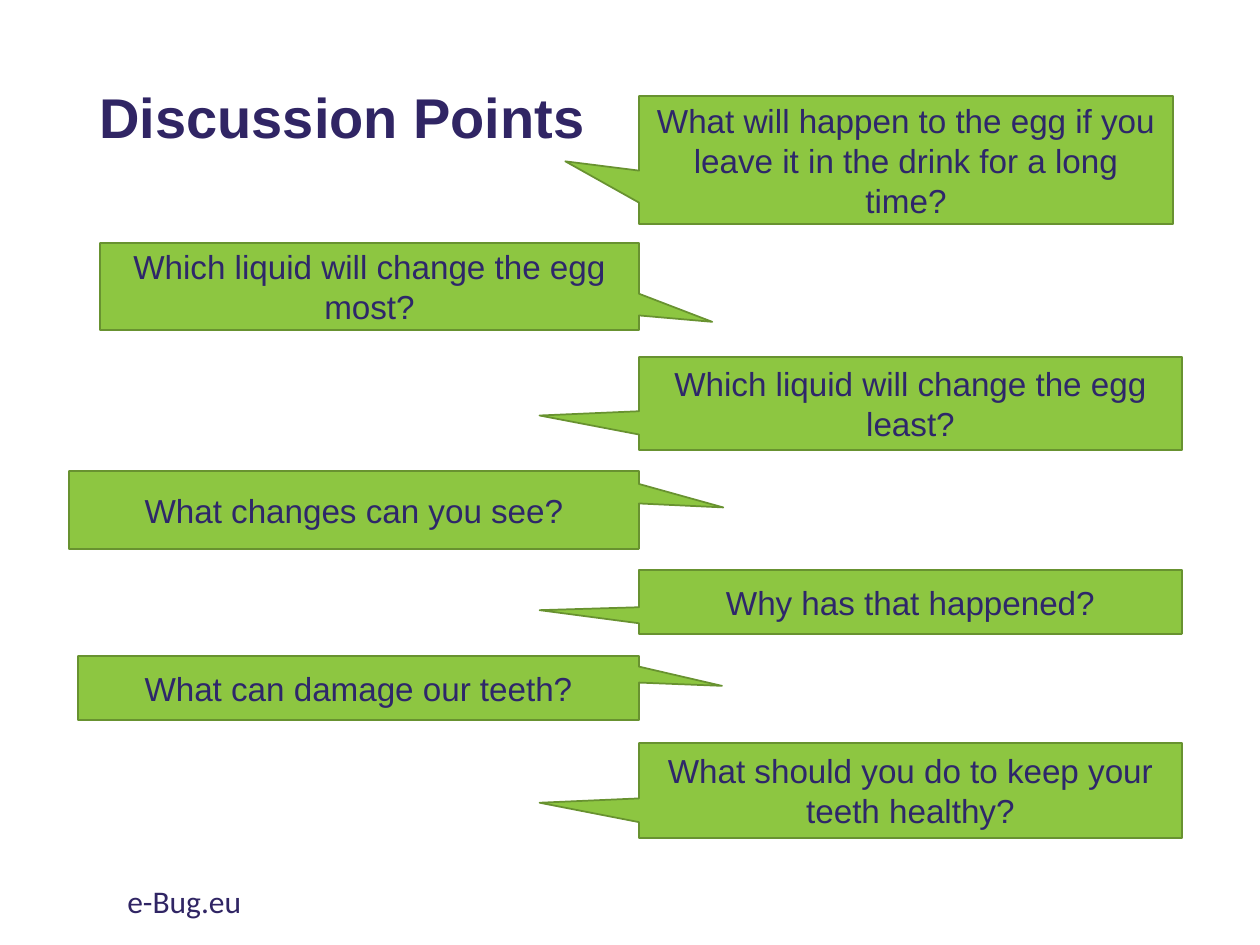
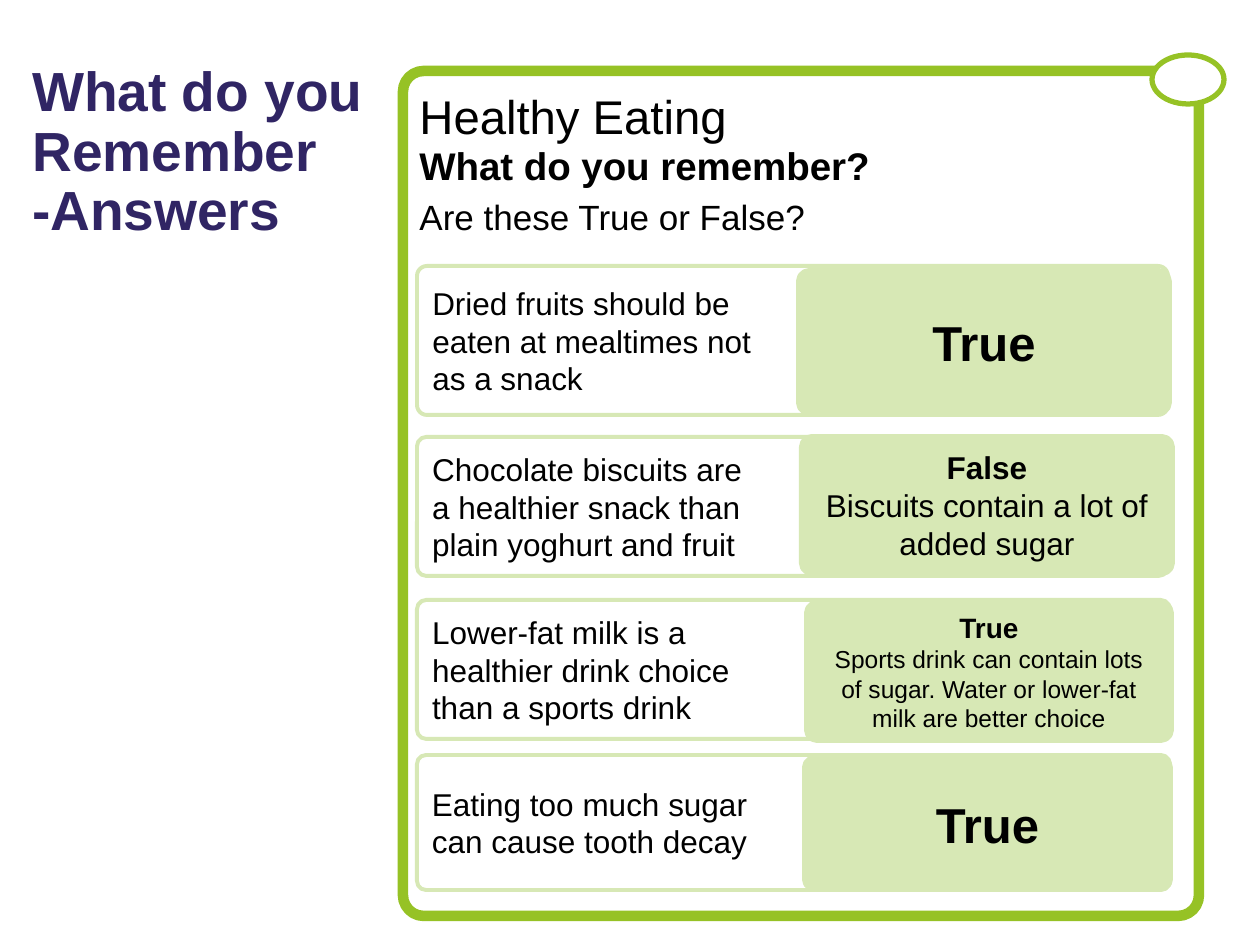
"""Build the discussion points slide and the healthy eating answers slide."""
from pptx import Presentation
from pptx.dml.color import RGBColor
from pptx.enum.shapes import MSO_SHAPE
from pptx.enum.text import MSO_ANCHOR, PP_ALIGN
from pptx.util import Emu, Pt

CALLOUT = MSO_SHAPE.RECTANGULAR_CALLOUT
ROUNDED = MSO_SHAPE.ROUNDED_RECTANGLE
OVAL = MSO_SHAPE.OVAL
TOP, MIDDLE = MSO_ANCHOR.TOP, MSO_ANCHOR.MIDDLE
LEFT, CENTER = PP_ALIGN.LEFT, PP_ALIGN.CENTER

PX = 914400 / 126
NAVY, INK, BLACK, WHITE = "302564", "2E276A", "000000", "FFFFFF"
GREEN, DARK_GREEN = "8DC641", "689230"
FRAME_GREEN, PALE_GREEN = "96C225", "D7E8B5"


def add_box(s, kind, box, fill=None, line=None, weight=1, adjust=()):
    x, y, w, h = [Emu(round(v * PX)) for v in box]
    if kind is None:
        return s.shapes.add_textbox(x, y, w, h)
    sp = s.shapes.add_shape(kind, x, y, w, h)
    sp.shadow.inherit = False
    if fill:
        sp.fill.solid()
        sp.fill.fore_color.rgb = RGBColor.from_string(fill)
    else:
        sp.fill.background()
    sp.line.color.rgb = RGBColor.from_string(line)
    sp.line.width = Pt(weight)
    for i, value in enumerate(adjust):
        sp.adjustments[i] = value
    return sp


def write(sp, lines, color, align=LEFT, anchor=MIDDLE, font="Arial", spacing=1.0):
    tf = sp.text_frame
    tf.word_wrap = True
    tf.vertical_anchor = anchor
    tf.text = "\n".join(text for text, size, bold in lines)
    for p, (text, size, bold) in zip(tf.paragraphs, lines):
        p.alignment = align
        p.line_spacing = spacing
        r = p.runs[0]
        r.font.name = font
        r.font.size = Pt(size)
        r.font.bold = bold
        r.font.color.rgb = RGBColor.from_string(color)


prs = Presentation()
prs.slide_width = Emu(round(1260 * PX))
prs.slide_height = Emu(round(945 * PX))
blank = prs.slide_layouts[6]

titles = [
    ("Discussion Points", 32, (87, 29, 1086, 183)),
    ("What do you Remember -Answers", 31.5, (20, 71, 532, 165)),
]
slides = []
for title, size, box in titles:
    s = prs.slides.add_slide(blank)
    write(add_box(s, None, box), [(title, size, True)], NAVY, spacing=0.9)
    slides.append(s)
discussion, answers = slides

sp = add_box(discussion, None, (115, 876, 426, 50))
write(sp, [("e-Bug.eu", 18, False)], NAVY, anchor=TOP, font="Calibri")

center = 639
callouts = [
    ("What will happen to the egg if you leave it in the drink for a long time?",
     96, 534, 128, (-0.638, 0.011)),
    ("Which liquid will change the egg most?", 243, 539, 87, (0.636, 0.407)),
    ("Which liquid will change the egg least?", 357, 543, 93, (-0.683, 0.129)),
    ("What changes can you see?", 471, 570, 78, (0.648, -0.032)),
    ("Why has that happened?", 570, 543, 64, (-0.683, 0.129)),
    ("What can damage our teeth?", 656, 561, 64, (0.648, -0.032)),
    ("What should you do to keep your teeth healthy?", 743, 543, 95, (-0.683, 0.129)),
]
for i, (question, y, w, h, tail) in enumerate(callouts):
    x = center - w if i % 2 else center
    sp = add_box(discussion, CALLOUT, (x, y, w, h), GREEN, DARK_GREEN, 1, tail)
    write(sp, [(question, 19, False)], INK, CENTER)

headings = [
    ("Healthy Eating", 27, False, (407, 81, 549, 71)),
    ("What do you remember?", 22, True, (407, 136, 718, 59)),
    ("Are these True or False?", 20, False, (407, 189, 549, 55)),
]
for text, size, bold, box in headings:
    write(add_box(answers, None, box), [(text, size, bold)], BLACK, anchor=TOP)

rows = [
    (["Dried fruits should be", "eaten at mealtimes not", "as a snack"],
     (417, 266, 751, 149),
     [("True", 28, True)], (800, 272, 368, 140)),
    (["Chocolate biscuits are", "a healthier snack than", "plain yoghurt and fruit"],
     (417, 437, 751, 139),
     [("False", 18, True), ("Biscuits contain a lot of added sugar", 18, False)],
     (803, 438, 368, 134)),
    (["Lower-fat milk is a", "healthier drink choice", "than a sports drink"],
     (417, 600, 753, 139),
     [("True", 16, True),
      ("Sports drink can contain lots of sugar. Water or lower-fat milk are better choice",
       14, False)],
     (808, 604, 362, 135)),
    (["Eating too much sugar", "can cause tooth decay"],
     (417, 755, 753, 135),
     [("True", 28, True)], (806, 759, 363, 129)),
]
for statement, statement_box, answer, answer_box in rows:
    sp = add_box(answers, ROUNDED, statement_box, None, PALE_GREEN, 2.25, [0.067])
    write(sp, [(text, 18, False) for text in statement], BLACK)
    sp = add_box(answers, ROUNDED, answer_box, PALE_GREEN, PALE_GREEN, 4.5, [0.067])
    write(sp, answer, BLACK, CENTER)

add_box(answers, ROUNDED, (403, 71, 796, 845), None, FRAME_GREEN, 6, [0.026])
add_box(answers, OVAL, (1152, 55, 72, 49), WHITE, FRAME_GREEN, 3)

prs.save("out.pptx")
